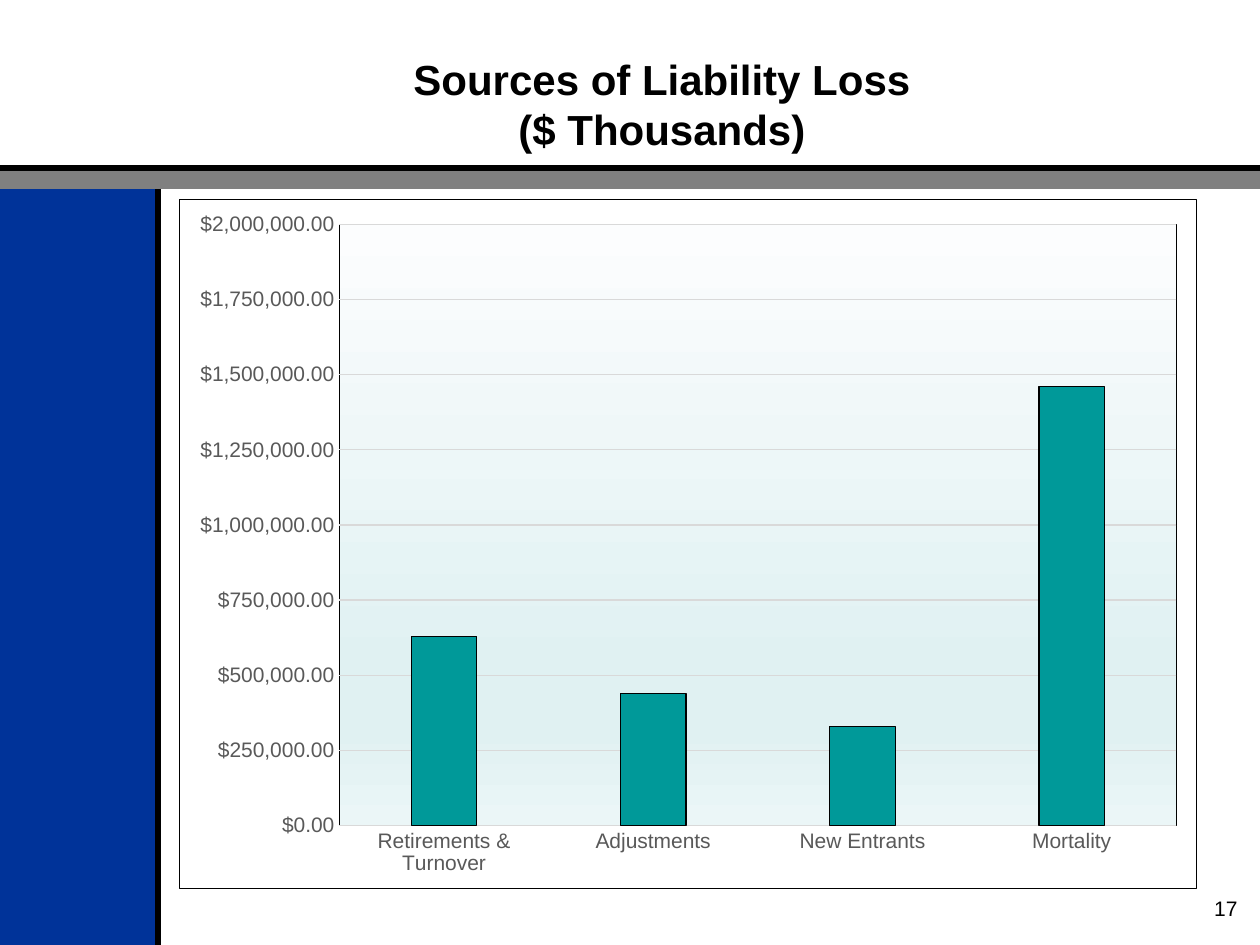
from dataclasses import dataclass

from lxml import etree
from pptx import Presentation
from pptx.chart.data import CategoryChartData
from pptx.dml.color import RGBColor
from pptx.enum.chart import XL_CHART_TYPE, XL_TICK_MARK
from pptx.enum.shapes import MSO_CONNECTOR, MSO_SHAPE
from pptx.enum.text import MSO_ANCHOR, PP_ALIGN
from pptx.oxml import parse_xml
from pptx.oxml.ns import nsdecls, qn
from pptx.util import Pt

COLUMN = XL_CHART_TYPE.COLUMN_CLUSTERED
NO_TICK = XL_TICK_MARK.NONE
STRAIGHT = MSO_CONNECTOR.STRAIGHT
RECT = MSO_SHAPE.RECTANGLE
MIDDLE, BOTTOM = MSO_ANCHOR.MIDDLE, MSO_ANCHOR.BOTTOM
CENTER, RIGHT = PP_ALIGN.CENTER, PP_ALIGN.RIGHT

SCALE = 914400 / 126
WIDE, HIGH = 1260, 945


@dataclass(frozen=True)
class Theme:
    font: str = "Arial"
    ink: str = "000000"
    blue: str = "003399"
    gray: str = "808080"
    teal: str = "009999"
    grid: str = "D9D9D9"
    label: str = "595959"
    fade: tuple = ((0, "FCFDFE"), (74, "E0F1F2"), (83, "E0F1F2"), (100, "EBF6F7"))
    title: int = 24
    small: int = 12
    rule: float = 3
    hair: float = 0.75


THEME = Theme()


def px(*nums):
    return [round(n * SCALE) for n in nums]


def rgb(code):
    return RGBColor.from_string(code)


def set_font(font, size, color, bold=False):
    font.name, font.size, font.bold = THEME.font, Pt(size), bold
    font.color.rgb = rgb(color)


def set_line(line, color, width):
    line.color.rgb = rgb(color)
    line.width = Pt(width)


def add_block(slide, box, color):
    block = slide.shapes.add_shape(RECT, *px(*box))
    block.shadow.inherit = False
    block.fill.solid()
    block.fill.fore_color.rgb = rgb(color)
    block.line.fill.background()


def add_rule(slide, *ends):
    rule = slide.shapes.add_connector(STRAIGHT, *px(*ends))
    set_line(rule.line, THEME.ink, THEME.rule)
    etree.SubElement(rule._element.spPr, qn("a:effectLst"))


def add_frame(slide, side, top, band):
    """Draw the blue side panel, the gray band and their black rules."""
    add_block(slide, (0, top + band, side, HIGH - top - band), THEME.blue)
    add_rule(slide, side, top, side, HIGH)
    add_block(slide, (0, top, WIDE, band), THEME.gray)
    add_rule(slide, 0, top, WIDE, top)


def add_title(slide, box, text):
    title = slide.shapes.title
    title.left, title.top, title.width, title.height = px(*box)
    frame = title.text_frame
    frame.vertical_anchor = BOTTOM
    frame.margin_bottom = px(4)[0]
    frame.text = text
    para = frame.paragraphs[0]
    para.alignment = CENTER
    set_font(para.font, THEME.title, THEME.ink, True)


def add_number(slide, box, text):
    frame = slide.shapes.add_textbox(*px(*box)).text_frame
    frame.word_wrap = True
    para = frame.paragraphs[0]
    para.text = text
    para.alignment = RIGHT
    set_font(para.font, THEME.small, THEME.ink)


def style_area(fill):
    """Return chart area properties with the given fill and a thin border."""
    return parse_xml(
        f'<c:spPr {nsdecls("c", "a")}>{fill}<a:ln w="{Pt(THEME.hair)}"><a:solidFill>'
        f'<a:srgbClr val="{THEME.ink}"/></a:solidFill></a:ln></c:spPr>')


def place_plot(area, box, plot):
    """Fix the inner plot box as fractions of the chart box."""
    x, y, w, h = box
    left, top, wide, high = plot
    parts = {"x": (left - x) / w, "y": (top - y) / h, "w": wide / w, "h": high / h}
    modes = "".join(f'<c:{k}Mode val="edge"/>' for k in "xy")
    sizes = "".join(f'<c:{k} val="{v:.4f}"/>' for k, v in parts.items())
    for old in area.findall(qn("c:layout")):
        area.remove(old)
    area.insert(0, parse_xml(
        f'<c:layout {nsdecls("c")}><c:manualLayout><c:layoutTarget val="inner"/>'
        f'{modes}{sizes}</c:manualLayout></c:layout>'))


def style_axes(chart):
    cat, val = chart.category_axis, chart.value_axis
    for axis in (cat, val):
        axis.major_tick_mark = axis.minor_tick_mark = NO_TICK
        set_font(axis.tick_labels.font, THEME.small, THEME.label)
    set_line(cat.format.line, THEME.grid, THEME.hair)
    val.format.line.fill.background()
    val.minimum_scale, val.maximum_scale, val.major_unit = 0, 2000000, 250000
    val.tick_labels.number_format = '"$"#,##0.00'
    val.tick_labels.number_format_is_linked = False
    set_line(val.major_gridlines.format.line, THEME.grid, THEME.hair)


def add_columns(slide, box, plot, values):
    data = CategoryChartData()
    data.categories = list(values)
    data.add_series("Series 1", list(values.values()))
    chart = slide.shapes.add_chart(COLUMN, *px(*box), data).chart
    chart.has_legend = chart.has_title = False
    set_font(chart.font, 10, THEME.ink)
    style_axes(chart)

    bars = chart.plots[0]
    bars.gap_width, bars.overlap, bars.vary_by_categories = 219, -27, False
    look = bars.series[0].format
    look.fill.solid()
    look.fill.fore_color.rgb = rgb(THEME.teal)
    set_line(look.line, THEME.ink, THEME.hair)

    root = chart._chartSpace.find(qn("c:chart"))
    area = root.find(qn("c:plotArea"))
    place_plot(area, box, plot)
    stops = "".join(f'<a:gs pos="{pos * 1000}"><a:srgbClr val="{code}"/></a:gs>'
                    for pos, code in THEME.fade)
    area.append(style_area(f'<a:gradFill><a:gsLst>{stops}</a:gsLst>'
                           '<a:lin ang="5400000" scaled="0"/></a:gradFill>'))
    root.addnext(style_area("<a:noFill/>"))


def main():
    deck = Presentation()
    deck.slide_width, deck.slide_height = px(WIDE, HIGH)
    slide = deck.slides.add_slide(deck.slide_layouts[5])
    add_frame(slide, side=158, top=168, band=21)
    add_number(slide, (1197, 889, 53, 66), "17")
    add_title(slide, (221, 0, 882, 158), "Sources of Liability Loss\v($ Thousands)")
    add_columns(slide, (179, 199, 1018, 690), (339, 224, 838, 602), {
        "Retirements & Turnover": 630000,
        "Adjustments": 440000,
        "New Entrants": 330000,
        "Mortality": 1460000,
    })
    deck.save("out.pptx")


if __name__ == "__main__":
    main()
